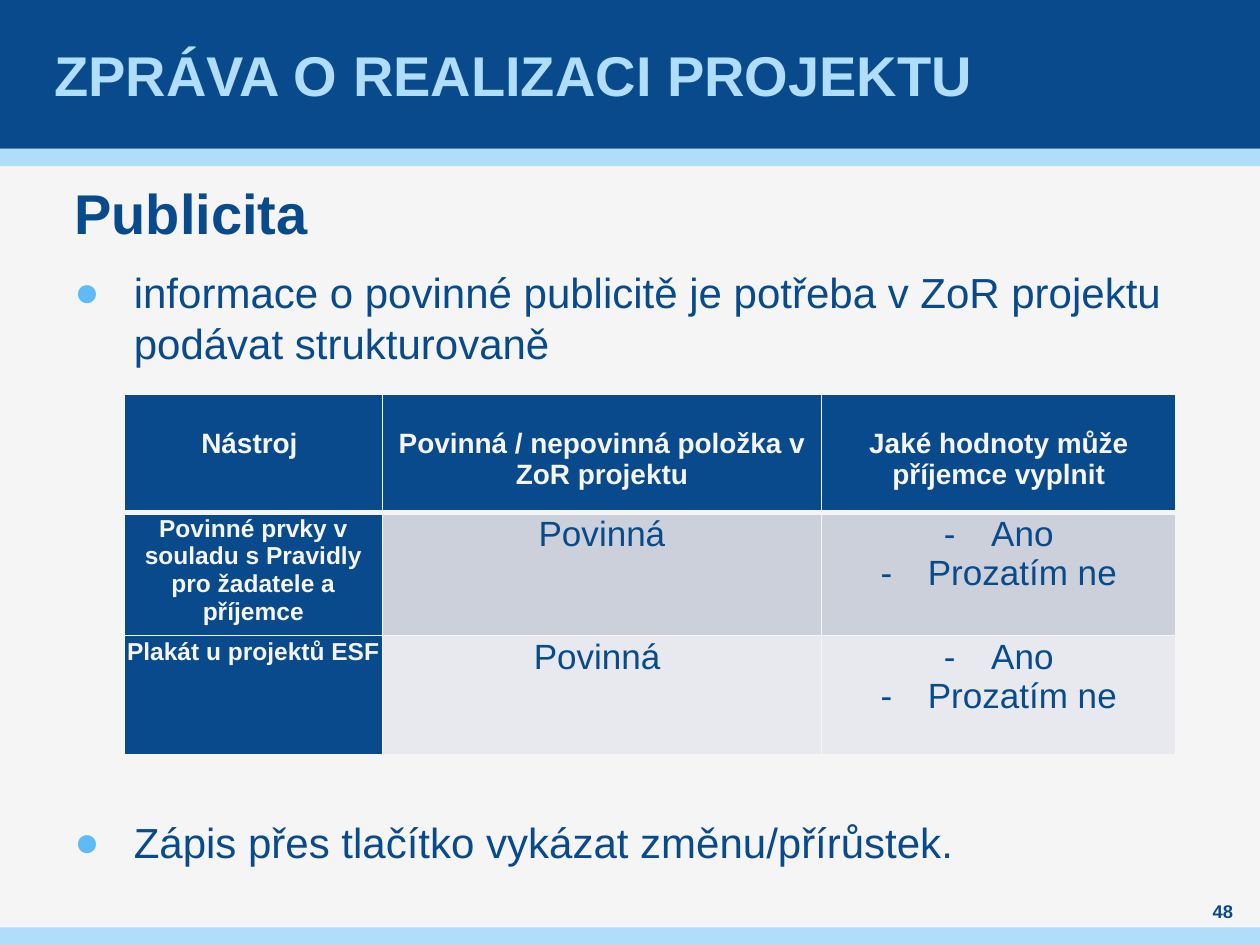
from lxml.etree import SubElement
from pptx import Presentation
from pptx.dml.color import RGBColor
from pptx.enum.shapes import MSO_SHAPE
from pptx.enum.text import MSO_ANCHOR, PP_ALIGN
from pptx.oxml import parse_xml
from pptx.oxml.ns import nsdecls, qn
from pptx.util import Pt

COLORS = {
    "navy": "084A8B",
    "sky": "AFDDFA",
    "bullet": "5FBBF5",
    "paper": "F5F5F5",
    "band_dark": "CCD0DA",
    "band_light": "E7E9EE",
}
FONT = "Arial"
HEADER = ["Nástroj ", "Povinná / nepovinná položka v ZoR projektu", "Jaké hodnoty může příjemce vyplnit"]
ANSWERS = ["Ano", "Prozatím ne"]
TOOLS = [
    ("Povinné prvky v souladu s Pravidly pro žadatele a příjemce", "Povinná", "band_dark"),
    ("Plakát u projektů ESF", "Povinná ", "band_light"),
]


def rgb(name):
    """Return a named colour."""
    return RGBColor.from_string(COLORS[name])


def format_para(para, size, color, bold=False, align=PP_ALIGN.LEFT):
    """Align a paragraph and format its runs."""
    para.alignment = align
    for span in para.runs:
        span.font.name = FONT
        span.font.size = Pt(size)
        span.font.bold = bold
        span.font.color.rgb = rgb(color)


def set_bullet(para, mark, indent, color=None):
    """Give a paragraph a hanging bullet."""
    properties = para._p.get_or_add_pPr()
    properties.set("marL", str(Pt(indent)))
    properties.set("indent", str(-Pt(indent)))
    if color:
        SubElement(SubElement(properties, qn("a:buClr")), qn("a:srgbClr")).set("val", COLORS[color])
    SubElement(properties, qn("a:buFont")).set("typeface", FONT)
    SubElement(properties, qn("a:buChar")).set("char", mark)


def set_frame(frame, inset=0, anchor=MSO_ANCHOR.TOP):
    """Set wrapping, side insets and anchor of a text frame."""
    frame.word_wrap = True
    frame.margin_left = frame.margin_right = Pt(inset)
    frame.margin_top = frame.margin_bottom = 0
    frame.vertical_anchor = anchor


def add_band(page, top, height, color):
    """Add a full-width coloured band."""
    band = page.shapes.add_shape(MSO_SHAPE.RECTANGLE, 0, Pt(top), Pt(720), Pt(height))
    band.shadow.inherit = False
    band.fill.solid()
    band.fill.fore_color.rgb = rgb(color)
    band.line.fill.background()


def set_title(page, text):
    """Place the title in front of the bands."""
    title = page.shapes.title
    title.element.getparent().append(title.element)
    title.left, title.top, title.width, title.height = Pt(28), 0, Pt(663), Pt(85)
    set_frame(title.text_frame, 3, MSO_ANCHOR.MIDDLE)
    title.text_frame.text = text
    format_para(title.text_frame.paragraphs[0], 32, "sky", True)


def add_body(page, heading, points):
    """Add the heading and the bulleted points with their space before."""
    box = page.shapes.add_textbox(Pt(42.5), Pt(111.6), Pt(635), Pt(402.5))
    frame = box.text_frame
    set_frame(frame)
    frame.text = "\n".join([heading] + [text for text, _ in points])
    gaps = [6] + [gap for _, gap in points]
    for index, (para, gap) in enumerate(zip(frame.paragraphs, gaps)):
        para.line_spacing = Pt(28.8)
        para.space_before = Pt(gap)
        para.space_after = Pt(6)
        format_para(para, 24 if index else 32, "navy", not index)
        if index:
            set_bullet(para, "●", 34, "bullet")


def add_page_number(page, number):
    """Add the page number at the lower right."""
    box = page.shapes.add_textbox(Pt(680.4), Pt(513.4), Pt(36.7), Pt(14.4))
    set_frame(box.text_frame, 0, MSO_ANCHOR.MIDDLE)
    box.text_frame.text = number
    format_para(box.text_frame.paragraphs[0], 10.5, "navy", True, PP_ALIGN.CENTER)


def set_borders(cell, top, bottom):
    """Draw the four borders of a cell."""
    widths = {"lnL": 1, "lnR": 1, "lnT": top, "lnB": bottom}
    for position, (side, width) in enumerate(widths.items()):
        line = parse_xml(
            f'<a:{side} {nsdecls("a")} w="{Pt(width)}"><a:solidFill>'
            f'<a:srgbClr val="{COLORS["paper"]}"/></a:solidFill></a:{side}>'
        )
        cell._tc.get_or_add_tcPr().insert(position, line)


def fill_cell(cell, lines, fill, size, color, bold, margin_top=1.4):
    """Write centred lines in a filled cell; several lines become a dashed list."""
    cell.margin_left = cell.margin_right = cell.margin_bottom = Pt(1.4)
    cell.margin_top = Pt(margin_top)
    cell.fill.solid()
    cell.fill.fore_color.rgb = rgb(fill)
    cell.text_frame.text = "\n".join(lines)
    for para in cell.text_frame.paragraphs:
        format_para(para, size, color, bold, PP_ALIGN.CENTER)
        if len(lines) > 1:
            set_bullet(para, "-", 27)


def add_tools_table(page):
    """Add the table of publicity tools."""
    widths = [147.5, 251, 202.5]
    table = page.shapes.add_table(3, 3, Pt(71), Pt(225), Pt(sum(widths)), Pt(204)).table
    table.horz_banding = False
    for column, width in zip(table.columns, widths):
        column.width = Pt(width)
    for cell, text in zip(table.rows[0].cells, HEADER):
        fill_cell(cell, [text], "navy", 16, "paper", True, 19.8)
        set_borders(cell, 1, 3)
    for number, (tool, duty, band) in enumerate(TOOLS, 1):
        tool_cell, duty_cell, answer_cell = table.rows[number].cells
        fill_cell(tool_cell, [tool], "navy", 14, "paper", True)
        fill_cell(duty_cell, [duty], band, 20, "navy", False)
        fill_cell(answer_cell, ANSWERS, band, 20, "navy", False)
        for cell in table.rows[number].cells:
            set_borders(cell, 3 if number == 1 else 1, 1)


def main():
    """Build and save the slide."""
    deck = Presentation()
    deck.slide_width, deck.slide_height = Pt(720), Pt(540)
    page = deck.slides.add_slide(deck.slide_layouts[5])
    page.background.fill.solid()
    page.background.fill.fore_color.rgb = rgb("paper")
    for top, height, color in [(85, 10, "sky"), (0, 85, "navy"), (530, 10, "sky")]:
        add_band(page, top, height, color)
    set_title(page, "ZPRÁVA O REALIZACI PROJEKTU")
    add_body(page, "Publicita", [
        ("informace o povinné publicitě je potřeba v ZoR projektu podávat strukturovaně", 6),
        ("Zápis přes tlačítko vykázat změnu/přírůstek.", 250.8),
    ])
    add_page_number(page, "48")
    add_tools_table(page)
    deck.save("out.pptx")


if __name__ == "__main__":
    main()
